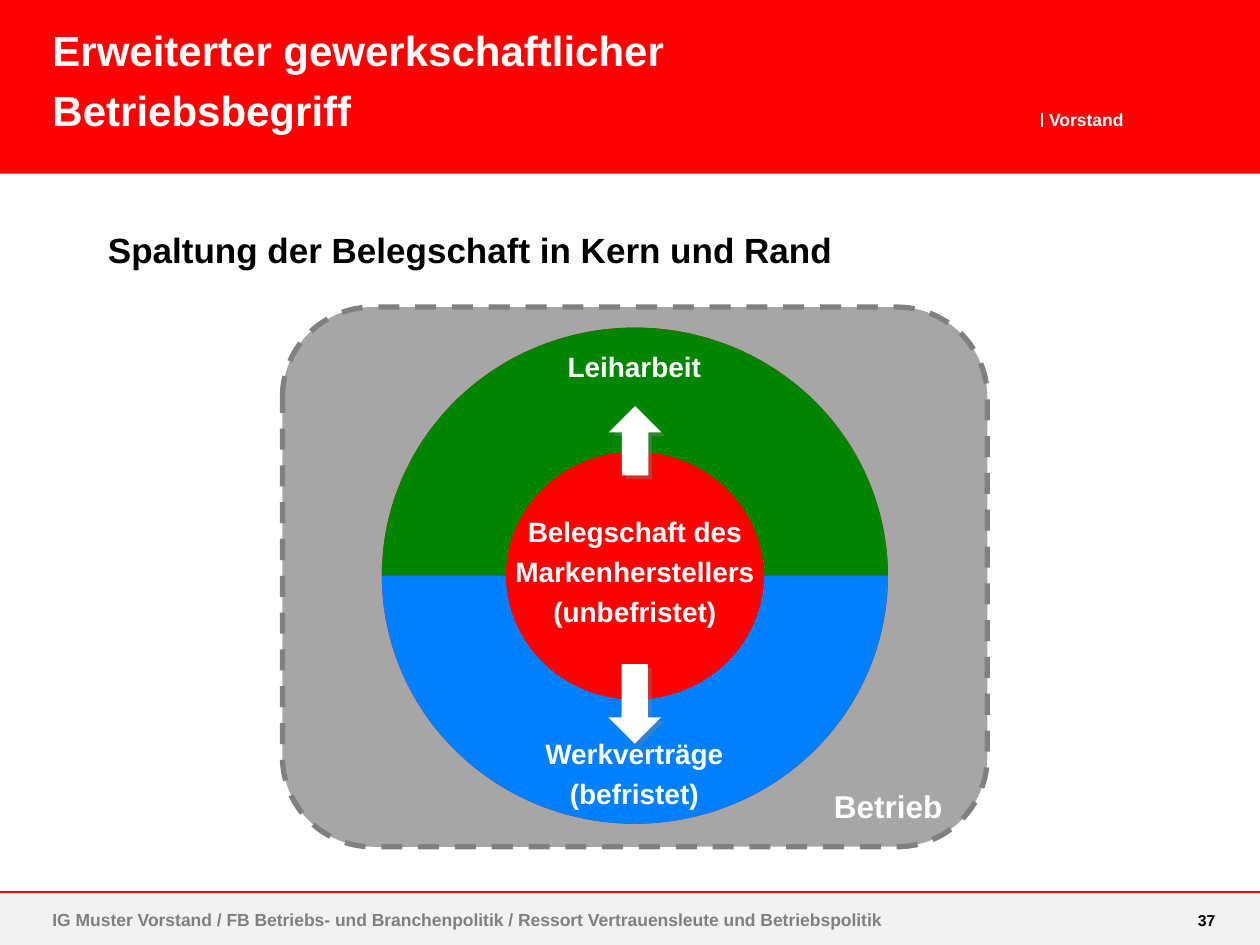
from dataclasses import dataclass
from typing import Optional

from lxml.etree import SubElement
from pptx import Presentation
from pptx.dml.color import RGBColor
from pptx.enum.dml import MSO_LINE
from pptx.enum.shapes import MSO_CONNECTOR, MSO_SHAPE as Geo
from pptx.enum.text import MSO_ANCHOR, MSO_AUTO_SIZE as Fit, PP_ALIGN as Al
from pptx.oxml.ns import qn
from pptx.util import Pt


@dataclass(frozen=True)
class Theme:
    font: str = "Arial"
    red: str = "FF0000"
    green: str = "008500"
    blue: str = "0080FF"
    white: str = "FFFFFF"
    black: str = "000000"
    pale: str = "F2F2F2"
    grey: str = "A6A6A6"
    dark: str = "808080"
    title: float = 24
    heading: float = 20
    plant: float = 18
    label: float = 16
    footer: float = 10
    number: float = 9


@dataclass(frozen=True)
class Box:
    x: float
    y: float
    w: float
    h: float

    def lengths(self) -> tuple:
        return Pt(self.x), Pt(self.y), Pt(self.w), Pt(self.h)


@dataclass(frozen=True)
class Figure:
    geo: Geo
    box: Box
    fill: str
    rotation: float = 0
    border: Optional[str] = None
    shadow: bool = False


@dataclass(frozen=True)
class Label:
    text: str
    box: Box
    size: float
    color: str
    align: Al = Al.CENTER
    spacing: object = 1.2
    inset: bool = True
    wrap: bool = True


T = Theme()
W, H = 720, 540
FOOT_Y = 509.8
RING = Box(218.2, 187.2, 289.2, 283.5)

BANDS = [
    Figure(Geo.RECTANGLE, Box(0, FOOT_Y, W, H - FOOT_Y), T.pale),
    Figure(Geo.RECTANGLE, Box(0, 0, W, 99.2), T.red),
]
DIAGRAM = [
    Figure(Geo.ROUNDED_RECTANGLE, Box(161.4, 175.5, 402.8, 308.4), T.grey, border=T.dark),
    Figure(Geo.OVAL, RING, T.red),
    Figure(Geo.BLOCK_ARC, RING, T.green),
    Figure(Geo.BLOCK_ARC, RING, T.blue, rotation=180),
    Figure(Geo.UP_ARROW, Box(347.8, 232, 30.2, 39.7), T.white, shadow=True),
    Figure(Geo.DOWN_ARROW, Box(347.6, 379.6, 30.2, 45.4), T.white, shadow=True),
]
LABELS = [
    Label("Vorstand", Box(599.5, 63.1, 43, 11.3), T.footer, T.white, Al.LEFT, Pt(11), False, False),
    Label("37", Box(684.5, 519.3, 10, 11.8), T.number, T.black, Al.RIGHT, Pt(12), False, False),
    Label("IG Muster Vorstand / FB Betriebs- und Branchenpolitik / Ressort Vertrauensleute und Betriebspolitik",
          Box(30, 519.3, 476, 12.2), T.footer, T.dark, Al.LEFT, 1.0, False, False),
    Label("Spaltung der Belegschaft in Kern und Rand", Box(61.7, 126, 638.6, 28),
          T.heading, T.black, Al.LEFT, inset=False),
    Label("Belegschaft des Markenherstellers\n(unbefristet)", Box(260.9, 286.6, 203.8, 76.3), T.label, T.white),
    Label("Betrieb", Box(462.2, 442.1, 90.7, 32.4), T.plant, T.white),
    Label("Leiharbeit", Box(291.6, 192.5, 141.8, 30.2), T.label, T.white),
    Label("Werkverträge\n(befristet)", Box(291.6, 413.3, 141.8, 53.3), T.label, T.white),
]


def rgb(color: str) -> RGBColor:
    """Turn a hex string into a colour."""
    return RGBColor.from_string(color)


def add_shadow(sp) -> None:
    """Give a shape a hard grey shadow to the lower right."""
    effects = sp._element.spPr.find(qn("a:effectLst"))
    outer = SubElement(effects, qn("a:outerShdw"), blurRad="0", dist=str(Pt(3)), dir="2700000",
                       algn="ctr", rotWithShape="0")
    clr = SubElement(outer, qn("a:srgbClr"), val=T.dark)
    SubElement(clr, qn("a:alpha"), val="40000")


def add_figure(s, fig: Figure) -> None:
    """Draw one filled preset shape."""
    sp = s.shapes.add_shape(fig.geo, *fig.box.lengths())
    sp.shadow.inherit = False
    sp.rotation = fig.rotation
    sp.fill.solid()
    sp.fill.fore_color.rgb = rgb(fig.fill)
    if fig.border:
        sp.line.color.rgb = rgb(fig.border)
        sp.line.width = Pt(3)
        sp.line.dash_style = MSO_LINE.DASH
    else:
        sp.line.fill.background()
    if fig.shadow:
        add_shadow(sp)


def add_rule(s, x1: float, y1: float, x2: float, y2: float, color: str) -> None:
    """Draw a thin straight line."""
    ln = s.shapes.add_connector(MSO_CONNECTOR.STRAIGHT, Pt(x1), Pt(y1), Pt(x2), Pt(y2))
    ln.line.color.rgb = rgb(color)
    ln.line.width = Pt(0.8)
    SubElement(ln._element.spPr, qn("a:effectLst"))


def fill_text(sp, label: Label) -> None:
    """Write and format the text of a box or placeholder."""
    tf = sp.text_frame
    tf.text = label.text
    tf.word_wrap = label.wrap
    tf.vertical_anchor = MSO_ANCHOR.TOP
    if not label.inset:
        tf.margin_left = tf.margin_right = tf.margin_top = tf.margin_bottom = 0
    for p in tf.paragraphs:
        p.alignment = label.align
        p.line_spacing = label.spacing
        for r in p.runs:
            r.font.name = T.font
            r.font.size = Pt(label.size)
            r.font.bold = True
            r.font.color.rgb = rgb(label.color)


def add_label(s, label: Label) -> None:
    """Add a text box that grows with its text."""
    sp = s.shapes.add_textbox(*label.box.lengths())
    fill_text(sp, label)
    sp.text_frame.auto_size = Fit.SHAPE_TO_FIT_TEXT


def set_title(s, label: Label) -> None:
    """Place the title placeholder in front of the red band."""
    sp = s.shapes.title
    sp.left, sp.top, sp.width, sp.height = label.box.lengths()
    fill_text(sp, label)
    sp.text_frame.auto_size = Fit.NONE
    sp.element.getparent().append(sp.element)


def main() -> None:
    """Build the slide and save it."""
    prs = Presentation()
    prs.slide_width, prs.slide_height = Pt(W), Pt(H)
    s = prs.slides.add_slide(prs.slide_layouts[5])
    for fig in BANDS:
        add_figure(s, fig)
    add_rule(s, 0, FOOT_Y, W, FOOT_Y, T.red)
    add_rule(s, 595.4, 64.8, 595.4, 72.7, T.white)
    for fig in DIAGRAM:
        add_figure(s, fig)
    for label in LABELS:
        add_label(s, label)
    set_title(s, Label("Erweiterter gewerkschaftlicher Betriebsbegriff", Box(30, 8, 381, 90),
                       T.title, T.white, Al.LEFT, inset=False))
    prs.save("out.pptx")


if __name__ == "__main__":
    main()
